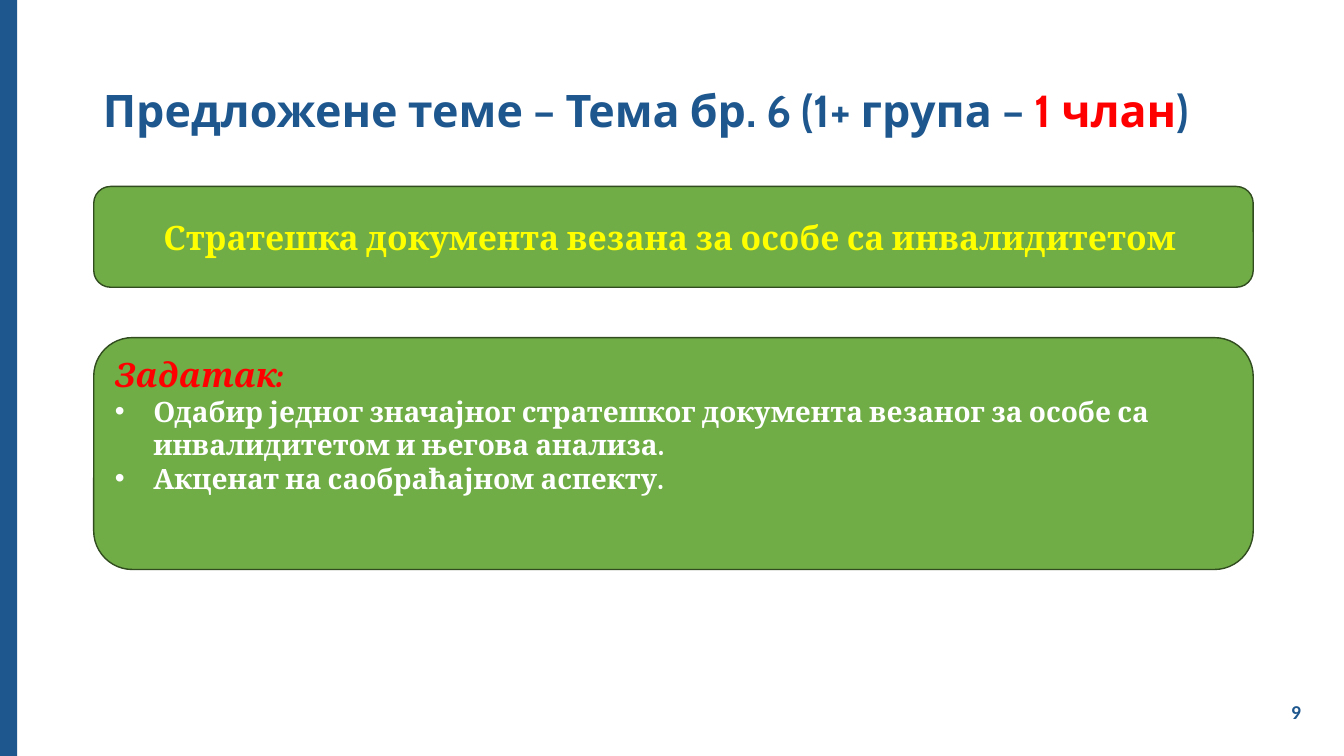
from lxml import etree
from pptx import Presentation
from pptx.dml.color import RGBColor
from pptx.enum import shapes, text
from pptx.oxml.ns import qn
from pptx.util import Inches, Pt

BLUE = RGBColor(0x1E, 0x57, 0x8E)
GREEN = RGBColor(0x70, 0xAD, 0x47)
DARK_GREEN = RGBColor(0x31, 0x4C, 0x1F)
RED = RGBColor(0xFF, 0x00, 0x00)
YELLOW = RGBColor(0xFF, 0xFF, 0x00)
WHITE = RGBColor(0xFF, 0xFF, 0xFF)

LEFT, WIDTH = 0.93, 11.5


def style(font, name, size, color, italic=False):
    font.name, font.size, font.bold, font.italic = name, Pt(size), True, italic
    font.color.rgb = color


def add_block(page, kind, box, fill, line=None):
    block = page.shapes.add_shape(kind, *map(Inches, box))
    block.shadow.inherit = False
    block.fill.solid()
    block.fill.fore_color.rgb = fill
    if line is None:
        block.line.fill.background()
    else:
        block.line.color.rgb = line
        block.line.width = Pt(1)
    return block


def add_bullet(para, indent):
    props = para._p.get_or_add_pPr()
    props.set("marL", str(Inches(indent)))
    props.set("indent", str(-Inches(indent)))
    etree.SubElement(props, qn("a:buFont")).set("typeface", "Arial")
    etree.SubElement(props, qn("a:buChar")).set("char", "•")


def set_title(page, box, parts):
    title = page.shapes.title
    title.left, title.top, title.width, title.height = map(Inches, box)
    frame = title.text_frame
    frame.auto_size = text.MSO_AUTO_SIZE.NONE
    frame.vertical_anchor = text.MSO_ANCHOR.MIDDLE
    para = frame.paragraphs[0]
    para.alignment = text.PP_ALIGN.LEFT
    para.line_spacing = 0.9
    for wording, color in parts:
        span = para.add_run()
        span.text = wording
        style(span.font, "Cabin", 32, color)


def add_topic(page, box, wording):
    panel = add_block(page, shapes.MSO_SHAPE.ROUNDED_RECTANGLE, box, GREEN, DARK_GREEN)
    panel.text_frame.vertical_anchor = text.MSO_ANCHOR.MIDDLE
    para = panel.text_frame.paragraphs[0]
    para.text = wording
    para.alignment = text.PP_ALIGN.CENTER
    style(para.font, "Cambria", 24, YELLOW)


def add_task(page, box, heading, items):
    panel = add_block(page, shapes.MSO_SHAPE.ROUNDED_RECTANGLE, box, GREEN, DARK_GREEN)
    frame = panel.text_frame
    frame.vertical_anchor = text.MSO_ANCHOR.TOP
    para = frame.paragraphs[0]
    para.text = heading
    para.alignment = text.PP_ALIGN.LEFT
    style(para.font, "Cambria", 24, RED, italic=True)
    for item in items:
        para = frame.add_paragraph()
        para.text = item
        para.alignment = text.PP_ALIGN.LEFT
        add_bullet(para, 0.38)
        style(para.font, "Cambria", 20, WHITE)


def add_page_number(page, box, number):
    frame = page.shapes.add_textbox(*map(Inches, box)).text_frame
    frame.word_wrap = True
    frame.vertical_anchor = text.MSO_ANCHOR.MIDDLE
    para = frame.paragraphs[0]
    para.text = number
    para.alignment = text.PP_ALIGN.CENTER
    style(para.font, "Calibri", 14, BLUE)


def main():
    deck = Presentation()
    deck.slide_width, deck.slide_height = Inches(13.33), Inches(7.5)
    page = deck.slides.add_slide(deck.slide_layouts[5])

    # Side band and page number
    add_block(page, shapes.MSO_SHAPE.RECTANGLE, (0, 0, 0.17, 7.5), BLUE)
    add_page_number(page, (12.6, 6.86, 0.51, 0.4), "9")

    # Title
    set_title(page, (0.92, 0.4, WIDTH, 1.45), [
        ("Предложене теме – Тема бр. 6 (1+ група – ", BLUE),
        ("1 члан", RED),
        (")", BLUE),
    ])

    # Topic and its task
    add_topic(page, (LEFT, 1.85, WIDTH, 1),
              "Стратешка документа везана за особе са инвалидитетом ")
    add_task(page, (LEFT, 3.35, WIDTH, 2.3), "Задатак:", [
        "Одабир једног значајног стратешког документа везаног за особе са "
        "инвалидитетом и његова анализа.",
        "Акценат на саобраћајном аспекту.",
    ])

    deck.save("out.pptx")


if __name__ == "__main__":
    main()
